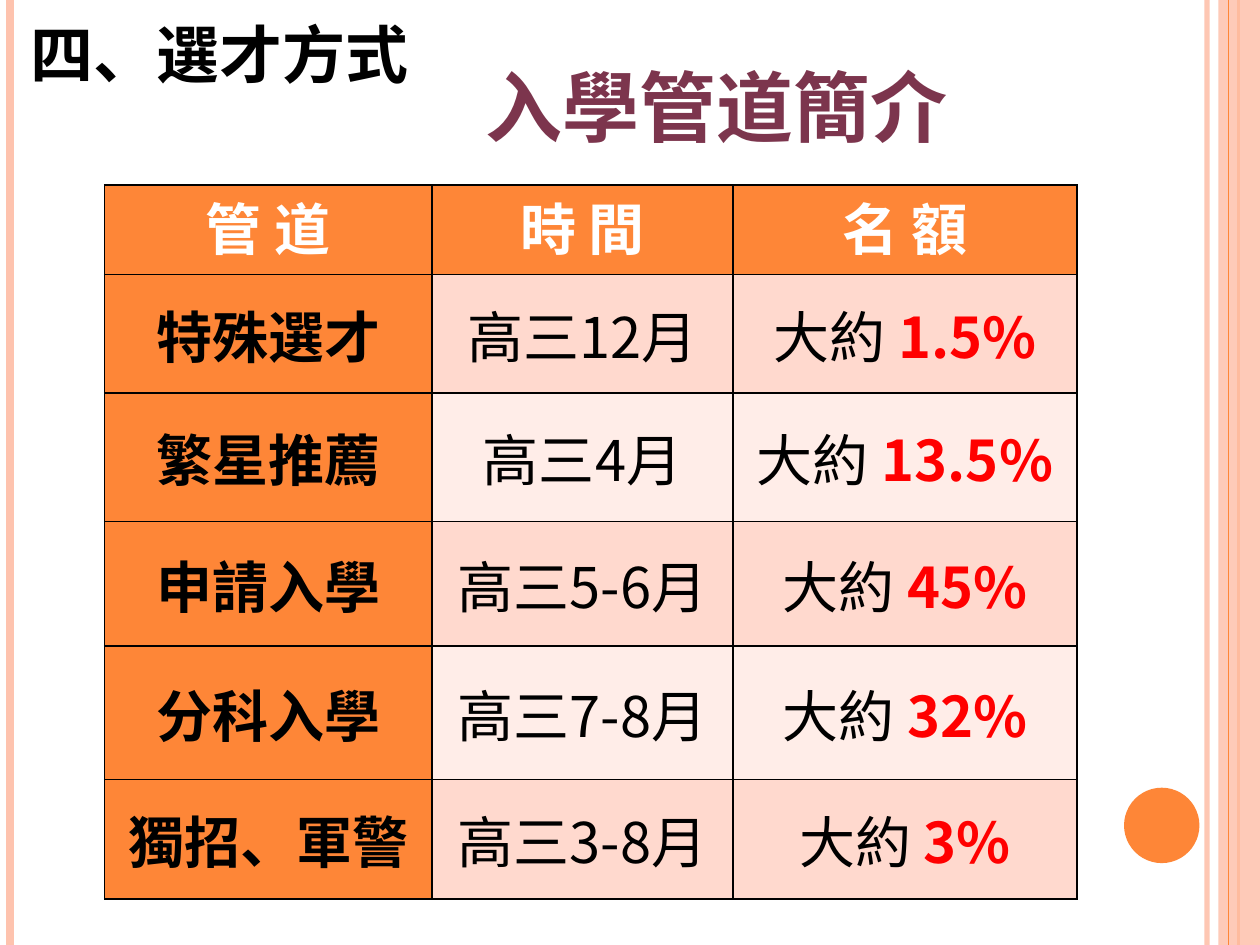
from lxml import etree
from pptx import Presentation
from pptx.dml.color import RGBColor
from pptx.enum.shapes import MSO_CONNECTOR, MSO_SHAPE
from pptx.enum.text import MSO_ANCHOR, PP_ALIGN
from pptx.oxml.ns import qn
from pptx.util import Cm, Pt

STRAIGHT = MSO_CONNECTOR.STRAIGHT
RECTANGLE, OVAL = MSO_SHAPE.RECTANGLE, MSO_SHAPE.OVAL
LEFT, CENTER = PP_ALIGN.LEFT, PP_ALIGN.CENTER
TOP, MIDDLE = MSO_ANCHOR.TOP, MSO_ANCHOR.MIDDLE

FONT = "Noto Sans CJK SC"
BLACK = RGBColor(0x00, 0x00, 0x00)
WHITE = RGBColor(0xFF, 0xFF, 0xFF)
RED = RGBColor(0xFF, 0x00, 0x00)
PLUM = RGBColor(0x7C, 0x35, 0x4D)
ORANGE = RGBColor(0xFE, 0x86, 0x37)
PEACH = RGBColor(0xFE, 0xC3, 0xAE)
BANDS = (RGBColor(0xFF, 0xD9, 0xCE), RGBColor(0xFF, 0xED, 0xE8))

# Content
SECTION = "四、選才方式"
TITLE = "入學管道簡介"
HEADERS = ("管 道", "時 間", "名 額")
CHANNELS = [
    ("特殊選才", "高三12月", "1.5%"),
    ("繁星推薦", "高三4月", "13.5%"),
    ("申請入學", "高三5-6月", "45%"),
    ("分科入學", "高三7-8月", "32%"),
    ("獨招、軍警", "高三3-8月", "3%"),
]
QUOTA_PREFIX = "大約 "

# Layout in centimetres
WIDTH, HEIGHT = 25.4, 19.05
TABLE_LEFT, TABLE_TOP = 2.11, 3.73
COLUMN_WIDTHS = (6.6, 6.07, 6.93)
ROW_HEIGHTS = (1.8, 2.39, 2.59, 2.51, 2.69, 2.41)
CELL_MARGIN = 0.18


def add_run(paragraph, text, size=32, color=BLACK, bold=False):
    run = paragraph.add_run()
    run.text = text
    run.font.size = Pt(size)
    run.font.bold = bold
    run.font.color.rgb = color
    run.font.name = FONT
    etree.SubElement(run.font._element, qn("a:ea"), typeface=FONT)


def add_text(slide, text, left, top, width, height, align=LEFT, **style):
    box = slide.shapes.add_textbox(Cm(left), Cm(top), Cm(width), Cm(height))
    frame = box.text_frame
    frame.word_wrap = True
    frame.vertical_anchor = MIDDLE
    frame.paragraphs[0].alignment = align
    add_run(frame.paragraphs[0], text, **style)


def set_alpha(element, percent):
    color = next(element.iter(qn("a:srgbClr")))
    etree.SubElement(color, qn("a:alpha"), val=str(percent * 1000))


def add_stripe(slide, x, width, color, alpha=100):
    line = slide.shapes.add_connector(STRAIGHT, Cm(x), 0, Cm(x), Cm(HEIGHT))
    line.line.width = Pt(width)
    line.line.color.rgb = color
    properties = line._element.spPr
    if alpha < 100:
        set_alpha(properties, alpha)
    etree.SubElement(properties, qn("a:effectLst"))


def add_block(slide, kind, left, top, width, height, color, alpha=100):
    shape = slide.shapes.add_shape(kind, Cm(left), Cm(top), Cm(width), Cm(height))
    shape.shadow.inherit = False
    shape.fill.solid()
    shape.fill.fore_color.rgb = color
    shape.line.fill.background()
    if alpha < 100:
        set_alpha(shape._element.spPr, alpha)


def fill_cell(cell, runs, fill, anchor=MIDDLE):
    cell.margin_left = cell.margin_right = Cm(CELL_MARGIN)
    cell.margin_top = cell.margin_bottom = 0
    cell.vertical_anchor = anchor
    properties = cell._tc.get_or_add_tcPr()
    for side in ("a:lnL", "a:lnR", "a:lnT", "a:lnB"):
        border = etree.SubElement(properties, qn(side), w=str(Pt(1)))
        solid = etree.SubElement(border, qn("a:solidFill"))
        etree.SubElement(solid, qn("a:srgbClr"), val=str(BLACK))
    cell.fill.solid()
    cell.fill.fore_color.rgb = fill
    paragraph = cell.text_frame.paragraphs[0]
    paragraph.alignment = CENTER
    for text, style in runs:
        add_run(paragraph, text, **style)


def add_channel_table(slide):
    table = slide.shapes.add_table(
        len(ROW_HEIGHTS), len(COLUMN_WIDTHS), Cm(TABLE_LEFT), Cm(TABLE_TOP),
        Cm(sum(COLUMN_WIDTHS)), Cm(sum(ROW_HEIGHTS))).table
    for column, width in zip(table.columns, COLUMN_WIDTHS):
        column.width = Cm(width)
    for row, height in zip(table.rows, ROW_HEIGHTS):
        row.height = Cm(height)
    for column, header in enumerate(HEADERS):
        fill_cell(table.cell(0, column), [(header, {"color": WHITE, "bold": True})],
                  ORANGE, anchor=TOP)
    for row, (channel, period, quota) in enumerate(CHANNELS, start=1):
        band = BANDS[(row - 1) % 2]
        fill_cell(table.cell(row, 0), [(channel, {"bold": True})], ORANGE)
        fill_cell(table.cell(row, 1), [(period, {})], band)
        fill_cell(table.cell(row, 2), [(QUOTA_PREFIX, {}),
                                       (quota, {"color": RED, "bold": True})], band)


def main():
    presentation = Presentation()
    presentation.slide_width, presentation.slide_height = Cm(WIDTH), Cm(HEIGHT)
    slide = presentation.slides.add_slide(presentation.slide_layouts[6])

    # Side decoration
    add_stripe(slide, 24.33, 3, PEACH, alpha=93)
    add_stripe(slide, 0.2, 4.5, PEACH)
    add_stripe(slide, 24.97, 1.5, ORANGE)
    add_block(slide, RECTANGLE, 24.56, 0, 0.84, HEIGHT, PEACH, alpha=87)
    add_stripe(slide, 24.77, 0.75, ORANGE)
    add_block(slide, OVAL, 22.66, 15.88, 1.52, 1.52, ORANGE)

    # Table and headings
    add_channel_table(slide)
    add_text(slide, TITLE, 7.9, 1.14, 13.1, 2, align=CENTER,
             size=44, color=PLUM, bold=True)
    add_text(slide, SECTION, 0.36, 0.18, 9.14, 1.8, size=36, bold=True)
    presentation.save("out.pptx")


if __name__ == "__main__":
    main()
